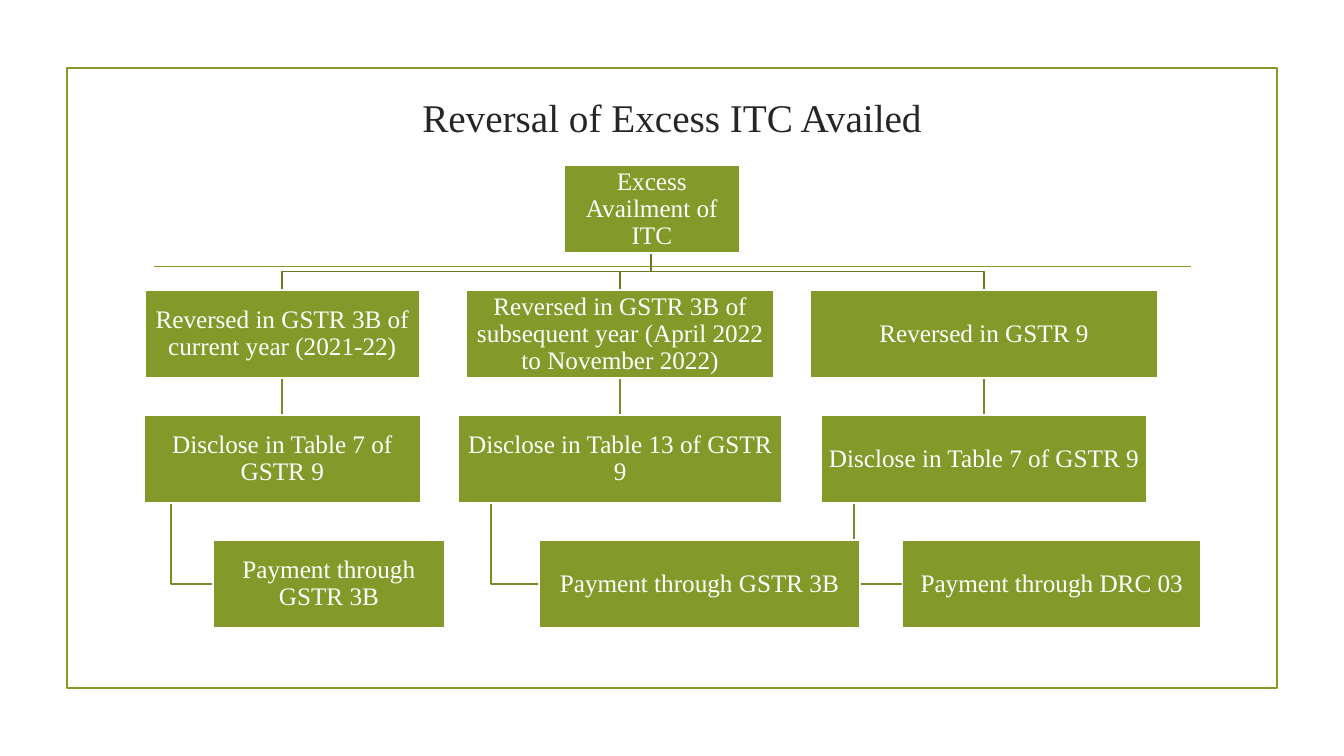
from lxml import etree
from pptx import Presentation, util as u
from pptx.dml.color import RGBColor
from pptx.enum import shapes, text
from pptx.oxml import ns

COLORS = {"green": "83992A", "trunk": "697B22", "branch": "778B26", "title": "262626", "white": "FFFFFF"}
FONT = "Times New Roman"
COLUMN = u.Inches(1)
ROW = u.Inches(1.24)
FIRST_ROW = u.Inches(1.64)
BOX_ROWS = 0.7
LINE = u.Pt(1.25)

BRANCHES = [
    (2.8, [("Reversed in GSTR 3B of current year (2021-22)", 2.73),
           ("Disclose in Table 7 of GSTR 9", 2.75),
           ("Payment through GSTR 3B", 2.3)]),
    (6.15, [("Reversed in GSTR 3B of subsequent year (April 2022 to November 2022)", 3.05),
            ("Disclose in Table 13 of GSTR 9", 3.21),
            ("Payment through GSTR 3B", 3.18)]),
    (9.76, [("Reversed in GSTR 9", 3.45),
            ("Disclose in Table 7 of GSTR 9", 3.23),
            ("Payment through DRC 03", 2.96)]),
]
ROOT_CENTER = 6.46


class Chart:
    def __init__(self, presentation):
        self.width = presentation.slide_width
        self.height = presentation.slide_height
        self.slide = presentation.slides.add_slide(presentation.slide_layouts[5])

    def x(self, columns):
        return round(columns * COLUMN)

    def y(self, rows):
        return round(FIRST_ROW + rows * ROW)

    def outline(self, shape, color):
        shape.line.color.rgb = RGBColor.from_string(COLORS[color])
        shape.line.width = LINE

    def label(self, shape, words, size, color):
        frame = shape.text_frame
        frame.text = words
        frame.word_wrap = True
        frame.auto_size = text.MSO_AUTO_SIZE.NONE
        frame.vertical_anchor = text.MSO_ANCHOR.MIDDLE
        paragraph = frame.paragraphs[0]
        paragraph.alignment = text.PP_ALIGN.CENTER
        font = paragraph.runs[0].font
        font.name = FONT
        font.size = u.Pt(size)
        font.color.rgb = RGBColor.from_string(COLORS[color])
        return frame

    def title(self, words, left, top, width, height):
        shape = self.slide.shapes.title
        shape.left, shape.width = round(left * self.width), round(width * self.width)
        shape.top, shape.height = round(top * self.height), round(height * self.height)
        self.label(shape, words, 28, "title")

    def frame(self, margin_x, margin_y):
        left, top = round(margin_x * self.width), round(margin_y * self.height)
        shape = self.slide.shapes.add_shape(
            shapes.MSO_SHAPE.RECTANGLE, left, top, self.width - 2 * left, self.height - 2 * top)
        shape.shadow.inherit = False
        shape.fill.background()
        self.outline(shape, "green")

    def line(self, start, end, color):
        connector = self.slide.shapes.add_connector(
            shapes.MSO_CONNECTOR.STRAIGHT,
            self.x(start[0]), self.y(start[1]), self.x(end[0]), self.y(end[1]))
        self.outline(connector, color)
        etree.SubElement(connector._element.spPr, ns.qn("a:effectLst"))

    def elbow(self, points, color):
        start, *others = [(self.x(column), self.y(row)) for column, row in points]
        builder = self.slide.shapes.build_freeform(*start)
        builder.add_line_segments(others, close=False)
        shape = builder.convert_to_shape()
        shape.shadow.inherit = False
        shape.fill.background()
        self.outline(shape, color)

    def box(self, words, left, row, width):
        shape = self.slide.shapes.add_shape(
            shapes.MSO_SHAPE.RECTANGLE, self.x(left), self.y(row), self.x(width), round(BOX_ROWS * ROW))
        shape.shadow.inherit = False
        shape.fill.solid()
        shape.fill.fore_color.rgb = RGBColor.from_string(COLORS["green"])
        self.outline(shape, "white")
        frame = self.label(shape, words, 18, "white")
        frame.paragraphs[0].line_spacing = 0.9
        frame.margin_left = frame.margin_right = u.Inches(0.01)
        frame.margin_top = frame.margin_bottom = u.Inches(0.01)


def main():
    presentation = Presentation()
    presentation.slide_width = u.Inches(13.33)
    presentation.slide_height = u.Inches(7.5)
    chart = Chart(presentation)
    chart.frame(0.05, 0.09)
    chart.line((1.53, 0.81), (11.81, 0.81), "green")
    chart.title("Reversal of Excess ITC Availed", 0.11, 0.11, 0.78, 0.09)

    for center, steps in reversed(BRANCHES):
        disclose_width = steps[1][1]
        stem = center - 0.4 * disclose_width
        payment_left = center - 0.25 * disclose_width
        chart.elbow([(stem, 2 + BOX_ROWS), (stem, 3.35), (payment_left, 3.35)], "branch")
        chart.line((center, 1 + BOX_ROWS), (center, 2), "branch")
        chart.elbow([(ROOT_CENTER, BOX_ROWS), (ROOT_CENTER, 0.85), (center, 0.85), (center, 1)], "trunk")

    chart.box("Excess Availment of ITC", ROOT_CENTER - 0.87, 0, 1.75)
    for center, steps in BRANCHES:
        payment_left = center - 0.25 * steps[1][1]
        for row, (words, width) in enumerate(steps, start=1):
            left = payment_left if row == 3 else center - width / 2
            chart.box(words, left, row, width)

    presentation.save("out.pptx")


if __name__ == "__main__":
    main()
